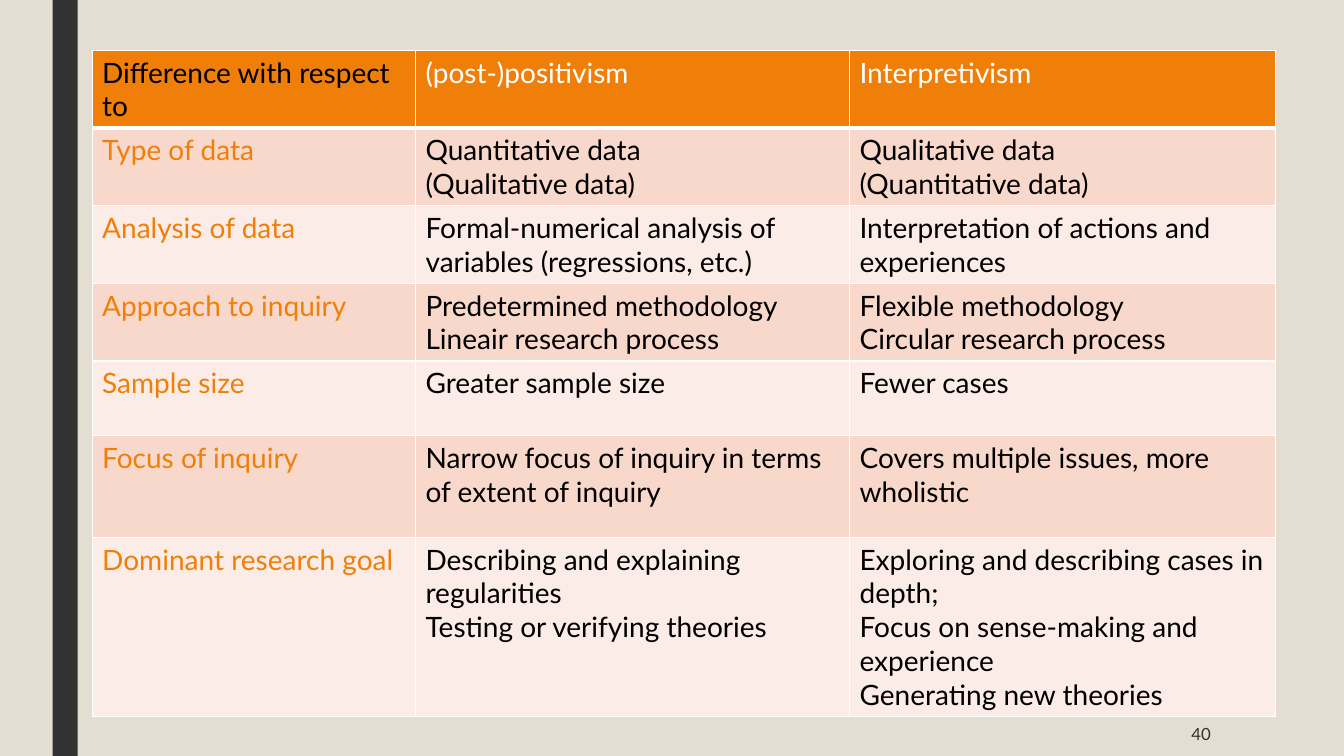
"""Build a slide comparing (post-)positivism and interpretivism."""
import dataclasses

import lxml.etree
import pptx
import pptx.dml.color
import pptx.enum.shapes
import pptx.enum.text
import pptx.oxml.ns
import pptx.util


@dataclasses.dataclass(frozen=True)
class Theme:
    font: str = "Lato"
    body: int = 20
    small: int = 12
    background: str = "E3DED1"
    dark: str = "323232"
    accent: str = "F07F09"
    bands: tuple = ("F9D8CC", "FCECE7")
    black: str = "000000"
    white: str = "FFFFFF"


class Deck:
    def __init__(self, prs, theme):
        self.theme = theme
        self.s = prs.slides.add_slide(prs.slide_layouts[6])
        self.fill(self.s.background.fill, theme.background)

    def fill(self, fill, color):
        fill.solid()
        fill.fore_color.rgb = pptx.dml.color.RGBColor.from_string(color)

    def box(self, *frame):
        return [pptx.util.Pt(v) for v in frame]

    def add_text(self, tf, lines, size, color, align=None):
        for i, line in enumerate(lines):
            p = tf.add_paragraph() if i else tf.paragraphs[0]
            p.alignment = align
            r = p.add_run()
            r.text = line
            r.font.name = self.theme.font
            r.font.size = pptx.util.Pt(size)
            r.font.bold = False
            r.font.color.rgb = pptx.dml.color.RGBColor.from_string(color)

    def bar(self, *frame):
        sp = self.s.shapes.add_shape(
            pptx.enum.shapes.MSO_SHAPE.RECTANGLE, *self.box(*frame))
        sp.shadow.inherit = False
        self.fill(sp.fill, self.theme.dark)
        sp.line.fill.background()

    def page_number(self, text, *frame):
        tf = self.s.shapes.add_textbox(*self.box(*frame)).text_frame
        tf.word_wrap = True
        tf.vertical_anchor = pptx.enum.text.MSO_ANCHOR.MIDDLE
        self.add_text(tf, [text], self.theme.small, self.theme.dark,
                      pptx.enum.text.PP_ALIGN.RIGHT)

    def borders(self, cell, bottom):
        tc_pr = cell._tc.get_or_add_tcPr()
        qn = pptx.oxml.ns.qn
        for side, width in zip("LRTB", (1, 1, 1, bottom)):
            ln = lxml.etree.SubElement(
                tc_pr, qn(f"a:ln{side}"), w=str(pptx.util.Pt(width)))
            solid = lxml.etree.SubElement(ln, qn("a:solidFill"))
            lxml.etree.SubElement(solid, qn("a:srgbClr"), val=self.theme.white)

    def cell_colors(self, row, col):
        t = self.theme
        if row == 0:
            return t.accent, t.white if col else t.black
        return t.bands[(row - 1) % 2], t.black if col else t.accent

    def table(self, left, top, widths, heights, rows):
        frame = self.box(left, top, sum(widths), sum(heights))
        table = self.s.shapes.add_table(len(rows), len(widths), *frame).table
        table.first_row = table.horz_banding = False
        for column, width in zip(table.columns, widths):
            column.width = pptx.util.Pt(width)
        for i, (height, texts) in enumerate(zip(heights, rows)):
            table.rows[i].height = pptx.util.Pt(height)
            for j, text in enumerate(texts):
                cell = table.cell(i, j)
                background, color = self.cell_colors(i, j)
                self.borders(cell, 1 if i else 3)
                self.fill(cell.fill, background)
                self.add_text(cell.text_frame, text.split("\n"),
                              self.theme.body, color)


ROWS = [
    ("Difference with respect to", "(post-)positivism", "Interpretivism"),
    ("Type of data", "Quantitative data\n(Qualitative data)",
     "Qualitative data\n(Quantitative data)"),
    ("Analysis of data",
     "Formal-numerical analysis of variables (regressions, etc.)",
     "Interpretation of actions and experiences"),
    ("Approach to inquiry",
     "Predetermined methodology\nLineair research process",
     "Flexible methodology\nCircular research process"),
    ("Sample size", "Greater sample size", "Fewer cases"),
    ("Focus of inquiry",
     "Narrow focus of inquiry in terms of extent of inquiry",
     "Covers multiple issues, more wholistic"),
    ("Dominant research goal",
     "Describing and explaining regularities\nTesting or verifying theories",
     "Exploring and describing cases in depth;\n"
     "Focus on sense-making and experience\nGenerating new theories"),
]


def main():
    prs = pptx.Presentation()
    prs.slide_width = pptx.util.Pt(960)
    prs.slide_height = pptx.util.Pt(540)
    deck = Deck(prs, Theme())
    deck.bar(37.5, 0, 18, 540)
    deck.table(65.8, 36, (231, 310, 304.5),
               [55.2] * 4 + [53.3, 72.7, 127.2], ROWS)
    deck.page_number("40", 746, 508.5, 126, 31.5)
    prs.save("out.pptx")


if __name__ == "__main__":
    main()
